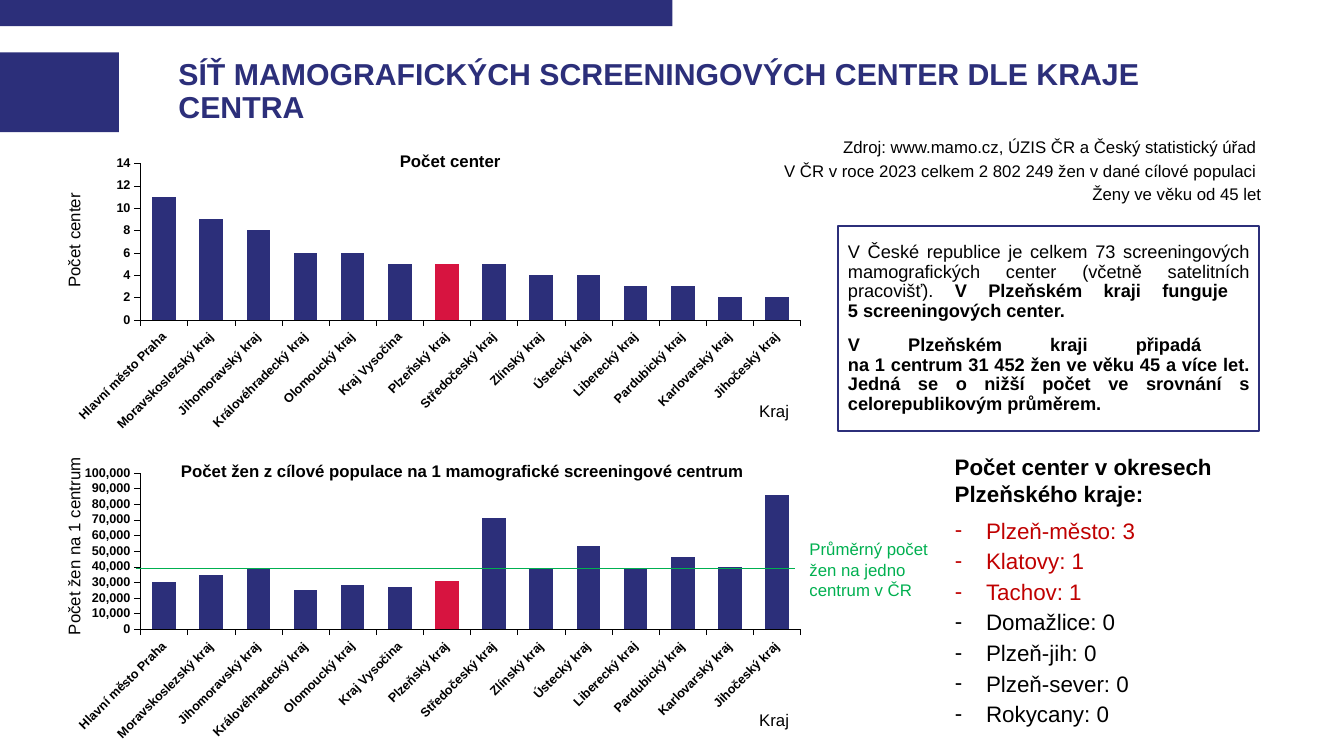
from dataclasses import dataclass

from lxml import etree
from pptx import Presentation
from pptx.chart.data import CategoryChartData
from pptx.dml.color import RGBColor
from pptx.enum.chart import XL_CHART_TYPE, XL_TICK_MARK
from pptx.enum.shapes import MSO_CONNECTOR, MSO_SHAPE
from pptx.enum.text import MSO_ANCHOR, MSO_AUTO_SIZE, PP_ALIGN
from pptx.oxml.ns import qn
from pptx.util import Inches, Pt

COLUMNS = XL_CHART_TYPE.COLUMN_CLUSTERED
OUTSIDE, NO_TICK = XL_TICK_MARK.OUTSIDE, XL_TICK_MARK.NONE
RECT, STRAIGHT = MSO_SHAPE.RECTANGLE, MSO_CONNECTOR.STRAIGHT
MIDDLE, TOP, NO_FIT = MSO_ANCHOR.MIDDLE, MSO_ANCHOR.TOP, MSO_AUTO_SIZE.NONE
LEFT, RIGHT, JUSTIFY = PP_ALIGN.LEFT, PP_ALIGN.RIGHT, PP_ALIGN.JUSTIFY
FONT = "Arial"
NAVY, RED, GREEN, BLACK, DARK_RED = "2C2F7A", "D71440", "00B050", "000000", "C00000"

REGIONS = [
    "Hlavní město Praha", "Moravskoslezský kraj", "Jihomoravský kraj",
    "Královéhradecký kraj", "Olomoucký kraj", "Kraj Vysočina", "Plzeňský kraj",
    "Středočeský kraj", "Zlínský kraj", "Ústecký kraj", "Liberecký kraj",
    "Pardubický kraj", "Karlovarský kraj", "Jihočeský kraj",
]
HIGHLIGHT = REGIONS.index("Plzeňský kraj")
DISTRICTS = {"Plzeň-město": 3, "Klatovy": 1, "Tachov": 1, "Domažlice": 0,
             "Plzeň-jih": 0, "Plzeň-sever": 0, "Rokycany": 0}


@dataclass
class RegionChart:
    top: float
    title: str
    title_pos: tuple[float, float]
    axis_title: str
    axis_pos: tuple[float, float]
    values: list[int]
    maximum: int
    step: int


CHARTS = [
    RegionChart(1.41, "Počet center", (0.46, 0.02), "Počet center", (0.03, 0.16),
                [11, 9, 8, 6, 6, 5, 5, 5, 4, 4, 3, 3, 2, 2], 14, 2),
    RegionChart(4.48, "Počet žen z cílové populace na 1 mamografické screeningové centrum",
                (0.18, 0.02), "Počet žen na 1 centrum", (0.03, 0.01),
                [30000, 35000, 39000, 25000, 28000, 27000, 31000, 71000, 39000,
                 53000, 39000, 46000, 40000, 86000], 100000, 10000),
]


def rgb(hex_code: str) -> RGBColor:
    return RGBColor.from_string(hex_code)


def style(font, size: float, color: str = BLACK, bold: bool = False) -> None:
    font.name, font.size, font.bold = FONT, Pt(size), bold
    font.color.rgb = rgb(color)


def place(sp, left: float, top: float, width: float, height: float) -> None:
    sp.left, sp.top = Inches(left), Inches(top)
    sp.width, sp.height = Inches(width), Inches(height)


def set_bullet(p, char: str = "", indent: float = 0) -> None:
    pPr = p._p.get_or_add_pPr()
    pPr.set("marL", str(Inches(indent)))
    pPr.set("indent", str(-Inches(indent)))
    if char:
        etree.SubElement(pPr, qn("a:buChar")).set("char", char)
    else:
        etree.SubElement(pPr, qn("a:buNone"))


def add_band(slide, left: float, top: float, width: float, height: float) -> None:
    sp = slide.shapes.add_shape(RECT, Inches(left), Inches(top), Inches(width), Inches(height))
    sp.shadow.inherit = False
    sp.fill.solid()
    sp.fill.fore_color.rgb = rgb(NAVY)
    sp.line.fill.background()


def add_text(slide, box: tuple[float, float, float, float], lines: list[str], size: float,
             color: str = BLACK, bold: bool = False, align=LEFT, gap: float = 0) -> None:
    tf = slide.shapes.add_textbox(*map(Inches, box)).text_frame
    tf.word_wrap = True
    tf.text = "\n".join(lines)
    for i, p in enumerate(tf.paragraphs):
        p.alignment = align
        p.space_before = Pt(gap if i else 0)
        for r in p.runs:
            style(r.font, size, color, bold)


def set_layout(parent, index: int, inner: bool = False, **fractions: float) -> None:
    for old in parent.findall(qn("c:layout")):
        parent.remove(old)
    layout = etree.Element(qn("c:layout"))
    manual = etree.SubElement(layout, qn("c:manualLayout"))
    settings = {"layoutTarget": "inner"} if inner else {}
    settings |= {"xMode": "edge", "yMode": "edge"} | fractions
    for tag, value in settings.items():
        etree.SubElement(manual, qn(f"c:{tag}")).set("val", str(value))
    parent.insert(index, layout)


def set_title(title, text: str, pos: tuple[float, float], bold: bool = False) -> None:
    title.text_frame.text = text
    for r in title.text_frame.paragraphs[0].runs:
        style(r.font, 12, BLACK, bold)
    set_layout(title._element, 1, x=pos[0], y=pos[1])


def add_region_chart(slide, item: RegionChart) -> None:
    data = CategoryChartData(number_format="#,##0")
    data.categories = REGIONS
    data.add_series(item.title, item.values)
    chart = slide.shapes.add_chart(COLUMNS, Inches(0.37), Inches(item.top),
                                   Inches(7.75), Inches(2.98), data).chart
    style(chart.font, 12, BLACK, True)
    chart.has_legend = False
    chart.has_title = True
    set_title(chart.chart_title, item.title, item.title_pos, True)

    plot = chart.plots[0]
    plot.gap_width, plot.overlap, plot.vary_by_categories = 100, 100, False
    series = plot.series[0]
    for fmt, color in ((series.format, NAVY), (series.points[HIGHLIGHT].format, RED)):
        fmt.fill.solid()
        fmt.fill.fore_color.rgb = rgb(color)

    cat, val = chart.category_axis, chart.value_axis
    for axis, title, pos in ((cat, "Kraj", (0.92, 0.85)), (val, item.axis_title, item.axis_pos)):
        set_title(axis.axis_title, title, pos)
        axis.has_major_gridlines = False
        axis.major_tick_mark, axis.minor_tick_mark = OUTSIDE, NO_TICK
        axis.format.line.width = Pt(0.25)
        axis.format.line.color.rgb = rgb(BLACK)
        style(axis.tick_labels.font, 9, BLACK, True)
    cat._element.find(qn("c:txPr")).find(qn("a:bodyPr")).set("rot", str(-45 * 60000))
    val.axis_title.text_frame._txBody.bodyPr.set("rot", str(-90 * 60000))
    val.minimum_scale, val.maximum_scale, val.major_unit = 0, item.maximum, item.step
    val.tick_labels.number_format = "#,##0"
    val.tick_labels.number_format_is_linked = False
    set_layout(chart._chartSpace.chart.plotArea, 0, True, x=0.132, y=0.071, w=0.845, h=0.521)


def fill_title(sp) -> None:
    place(sp, 1.77, 0.52, 10.72, 0.79)
    tf = sp.text_frame
    tf.text = "SÍŤ MAMOGRAFICKÝCH SCREENINGOVÝCH CENTER DLE KRAJE CENTRA"
    tf.margin_left, tf.vertical_anchor, tf.auto_size = 0, MIDDLE, NO_FIT
    p = tf.paragraphs[0]
    p.alignment, p.line_spacing = LEFT, 0.9
    style(p.runs[0].font, 21.6, NAVY, True)


def fill_summary(sp) -> None:
    place(sp, 8.31, 2.24, 4.18, 2.04)
    sp.line.color.rgb, sp.line.width = rgb(NAVY), Pt(1.5)
    tf = sp.text_frame
    tf.text = ("V České republice je celkem 73 screeningových mamografických center "
               "(včetně satelitních pracovišť). \n"
               "V Plzeňském kraji připadá \vna 1 centrum 31 452 žen ve věku 45 a více let. "
               "Jedná se o nižší počet ve srovnání s celorepublikovým průměrem.")
    tf.vertical_anchor, tf.auto_size = MIDDLE, NO_FIT
    first, second = tf.paragraphs
    bold_runs = [first.add_run()]
    bold_runs[0].text = "V Plzeňském kraji funguje "
    first.add_line_break()
    bold_runs.append(first.add_run())
    bold_runs[1].text = "5 screeningových center."
    for p, gap in ((first, 0), (second, 10)):
        set_bullet(p)
        p.alignment, p.line_spacing, p.space_before = JUSTIFY, 0.9, Pt(gap)
        for i, r in enumerate(p.runs):
            style(r.font, 13, BLACK, p is second or i > 0)


def fill_districts(sp) -> None:
    place(sp, 9.37, 5.04, 3.36, 2.22)
    tf = sp.text_frame
    tf.text = "\n".join(f"{name}: {count}" for name, count in DISTRICTS.items())
    tf.vertical_anchor, tf.auto_size = TOP, NO_FIT
    for p, count in zip(tf.paragraphs, DISTRICTS.values()):
        set_bullet(p, "-", 0.31)
        p.line_spacing, p.space_before = 1.14, Pt(0)
        style(p.runs[0].font, 16, DARK_RED if count else BLACK)


def main() -> None:
    prs = Presentation()
    prs.slide_width, prs.slide_height = Inches(13.33), Inches(7.5)
    slide = prs.slides.add_slide(prs.slide_layouts[3])

    # Header bands and placeholders
    add_band(slide, 0, 0, 6.67, 0.26)
    add_band(slide, 0, 0.52, 1.18, 0.79)
    fill_title(slide.shapes.title)
    fill_summary(slide.placeholders[1])
    fill_districts(slide.placeholders[2])

    # Charts and the national average
    for item in CHARTS:
        add_region_chart(slide, item)
    average = slide.shapes.add_connector(STRAIGHT, Inches(1.35), Inches(5.64),
                                         Inches(7.89), Inches(5.64))
    average.line.color.rgb, average.line.width = rgb(GREEN), Pt(1)
    etree.SubElement(average._element.spPr, qn("a:effectLst"))

    # Source, average label and district heading
    add_text(slide, (3.78, 1.31, 8.83, 0.97),
             ["Zdroj: www.mamo.cz, ÚZIS ČR a Český statistický úřad ",
              "V ČR v roce 2023 celkem 2 802 249 žen v dané cílové populaci ",
              "Ženy ve věku od 45 let"], 12, align=RIGHT, gap=2.4)
    add_text(slide, (7.93, 5.3, 1.54, 0.71),
             ["Průměrný počet žen na jedno centrum v ČR"], 12, GREEN)
    add_text(slide, (9.37, 4.45, 3.71, 0.64),
             ["Počet center v okresech Plzeňského kraje:"], 16, bold=True)
    prs.save("out.pptx")


if __name__ == "__main__":
    main()
